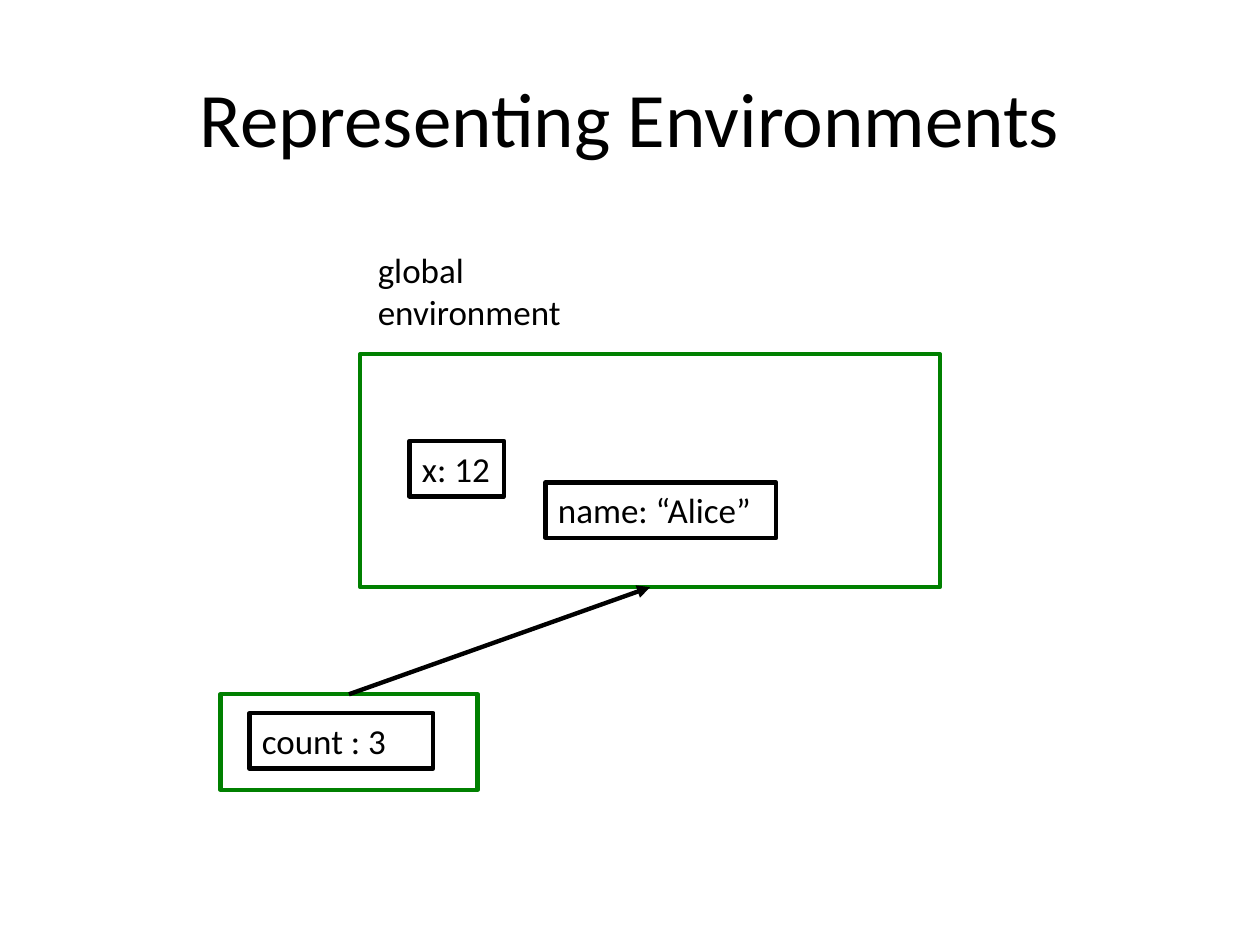
from dataclasses import dataclass

from lxml.etree import SubElement
from pptx import Presentation
from pptx.dml.color import RGBColor
from pptx.enum.shapes import MSO_CONNECTOR as Connector, MSO_SHAPE as Preset
from pptx.enum.text import MSO_ANCHOR as Anchor, MSO_AUTO_SIZE as AutoSize, PP_ALIGN as Align
from pptx.oxml.ns import qn
from pptx.shapes.autoshape import Shape
from pptx.shapes.shapetree import SlideShapes
from pptx.util import Inches, Pt


@dataclass(frozen=True)
class Theme:
    font: str = "Calibri"
    ink: RGBColor = RGBColor(0x00, 0x00, 0x00)
    frame: RGBColor = RGBColor(0x00, 0x80, 0x00)
    title_size: Pt = Pt(44)
    body_size: Pt = Pt(20)
    stroke: Pt = Pt(2.5)


@dataclass(frozen=True)
class Area:
    left: float
    top: float
    width: float
    height: float

    def lengths(self) -> list[Inches]:
        return [Inches(n) for n in (self.left, self.top, self.width, self.height)]


@dataclass(frozen=True)
class Binding:
    text: str
    area: Area


THEME = Theme()
TOP, BOTTOM = 0, 2
TITLE_AREA = Area(0.5, 0.3, 9, 1.25)
LABEL_AREA = Area(2.9, 1.92, 1.74, 0.77)
GLOBAL_AREA = Area(2.86, 2.81, 4.6, 1.85)
LOCAL_AREA = Area(1.75, 5.51, 2.04, 0.76)
BINDINGS = (
    Binding("count : 3", Area(1.98, 5.66, 1.46, 0.44)),
    Binding("x: 12", Area(3.25, 3.5, 0.75, 0.44)),
    Binding("name: “Alice”", Area(4.33, 3.83, 1.83, 0.44)),
)
TITLE_FORMAT = {"word_wrap": True, "vertical_anchor": Anchor.MIDDLE}
LABEL_FORMAT = {"word_wrap": False, "auto_size": AutoSize.SHAPE_TO_FIT_TEXT}
BINDING_FORMAT = {
    "word_wrap": True,
    "vertical_anchor": Anchor.TOP,
    "auto_size": AutoSize.SHAPE_TO_FIT_TEXT,
}


def write(holder: Shape, text: str, size: Pt, align: Align, frame_format: dict) -> None:
    frame = holder.text_frame
    frame.text = text
    for name, value in frame_format.items():
        setattr(frame, name, value)
    for paragraph in frame.paragraphs:
        paragraph.alignment = align
        for name, value in {"name": THEME.font, "size": size}.items():
            setattr(paragraph.font, name, value)
        paragraph.font.color.rgb = THEME.ink


def draw_box(shapes: SlideShapes, area: Area, color: RGBColor) -> Shape:
    box = shapes.add_shape(Preset.RECTANGLE, *area.lengths())
    box.shadow.inherit = False
    box.fill.background()
    box.line.color.rgb = color
    box.line.width = THEME.stroke
    return box


def draw_binding(shapes: SlideShapes, binding: Binding) -> None:
    box = draw_box(shapes, binding.area, THEME.ink)
    write(box, binding.text, THEME.body_size, Align.LEFT, BINDING_FORMAT)


def draw_parent_arrow(shapes: SlideShapes, child: Shape, parent: Shape) -> None:
    arrow = shapes.add_connector(Connector.STRAIGHT, 0, 0, 0, 0)
    arrow.begin_connect(child, TOP)
    arrow.end_connect(parent, BOTTOM)
    arrow.line.color.rgb = THEME.ink
    arrow.line.width = THEME.stroke
    SubElement(arrow.line._get_or_add_ln(), qn("a:tailEnd"), type="triangle")
    SubElement(arrow._element.spPr, qn("a:effectLst"))


def main() -> None:
    deck = Presentation()
    deck.slide_width, deck.slide_height = Inches(10), Inches(7.5)
    shapes = deck.slides.add_slide(deck.slide_layouts[6]).shapes

    title = shapes.add_textbox(*TITLE_AREA.lengths())
    write(title, "Representing Environments", THEME.title_size, Align.CENTER, TITLE_FORMAT)

    global_frame = draw_box(shapes, GLOBAL_AREA, THEME.frame)
    global_label = shapes.add_textbox(*LABEL_AREA.lengths())
    write(global_label, "global\nenvironment", THEME.body_size, Align.LEFT, LABEL_FORMAT)

    local_frame = draw_box(shapes, LOCAL_AREA, THEME.frame)
    draw_parent_arrow(shapes, local_frame, global_frame)
    for binding in BINDINGS:
        draw_binding(shapes, binding)

    deck.save("out.pptx")


if __name__ == "__main__":
    main()
